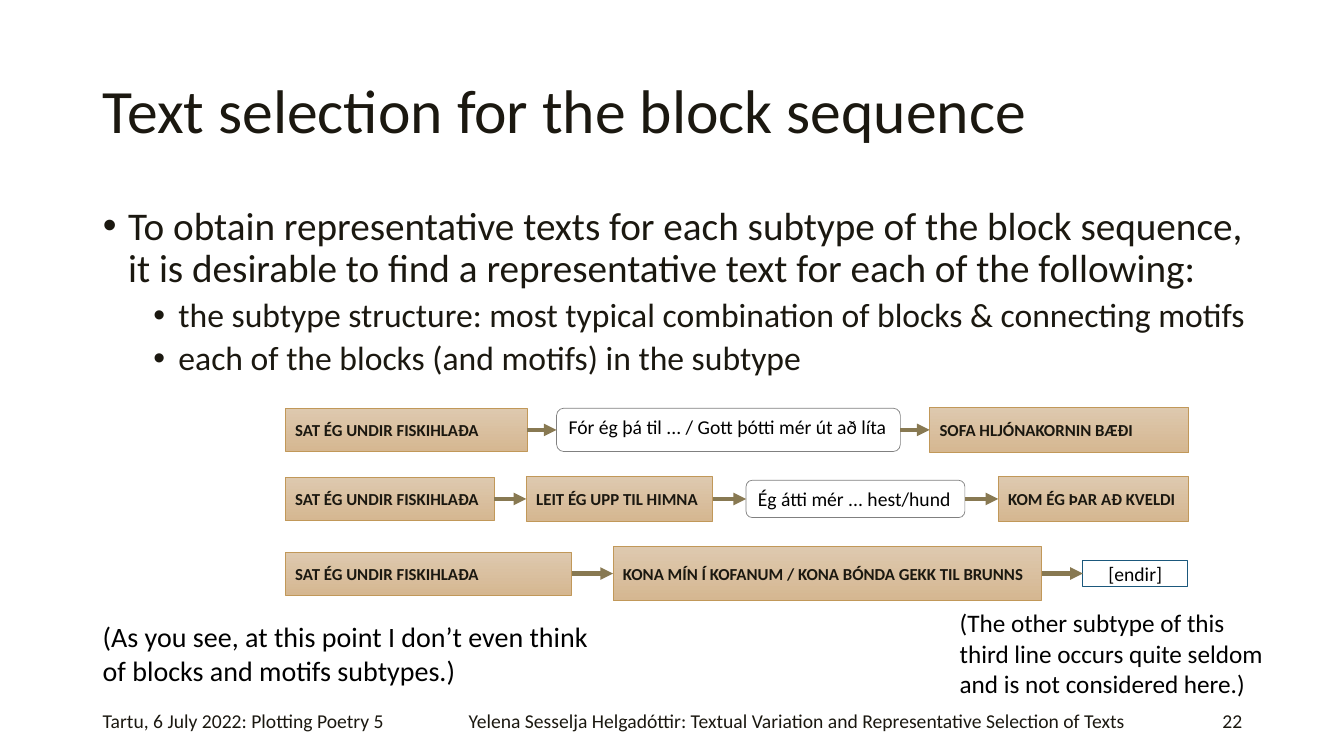
from itertools import pairwise

from lxml import etree
from pptx import Presentation
from pptx.dml.color import RGBColor
from pptx.enum.shapes import MSO_CONNECTOR, MSO_SHAPE
from pptx.enum.text import MSO_ANCHOR, MSO_AUTO_SIZE, PP_ALIGN
from pptx.oxml.ns import qn
from pptx.util import Inches, Pt

FONT, INK, BLACK = "Calibri", "1B1810", "000000"
LEFT, CENTER, RIGHT = PP_ALIGN.LEFT, PP_ALIGN.CENTER, PP_ALIGN.RIGHT
TOP, MIDDLE = MSO_ANCHOR.TOP, MSO_ANCHOR.MIDDLE

TITLE = "Text selection for the block sequence"
BULLETS = [
    (0, "To obtain representative texts for each subtype of the block sequence, "
        "it is desirable to find a representative text for each of the following:"),
    (1, "the subtype structure: most typical combination of blocks & connecting motifs"),
    (1, "each of the blocks (and motifs) in the subtype"),
]
LEVELS = [(28, 10, 0.25), (24, 5, 0.75)]

SEQUENCES = [
    (4.265, [
        ("block", 2.83, 2.4, 0.43, "SAT ÉG UNDIR FISKIHLAÐA"),
        ("long motif", 5.52, 3.41, 0.43, "Fór ég þá til ... / Gott þótti mér út að líta"),
        ("block", 9.22, 2.57, 0.45, "SOFA HLJÓNAKORNIN BÆÐI"),
    ]),
    (4.95, [
        ("block", 2.83, 2.07, 0.43, "SAT ÉG UNDIR FISKIHLAÐA"),
        ("block", 5.22, 1.85, 0.44, "LEIT ÉG UPP TIL HIMNA"),
        ("motif", 7.4, 2.17, 0.37, "Ég átti mér ... hest/hund"),
        ("block", 9.9, 1.89, 0.44, "KOM ÉG ÞAR AÐ KVELDI"),
    ]),
    (5.69, [
        ("block", 2.83, 2.84, 0.43, "SAT ÉG UNDIR FISKIHLAÐA"),
        ("block", 6.08, 4.25, 0.54, "KONA MÍN Í KOFANUM / KONA BÓNDA GEKK TIL BRUNNS"),
        ("end", 10.74, 1.04, 0.25, "[endir]"),
    ]),
]
ROUNDED = MSO_SHAPE.FLOWCHART_ALTERNATE_PROCESS
STYLES = {
    "block": (MSO_SHAPE.RECTANGLE, "C19859", 0.5, 12, INK, True, LEFT, MIDDLE),
    "motif": (ROUNDED, "808080", 0.5, 14, BLACK, False, LEFT, MIDDLE),
    "long motif": (ROUNDED, "808080", 0.5, 14, BLACK, False, LEFT, TOP),
    "end": (MSO_SHAPE.RECTANGLE, "1B587C", 0.75, 14, BLACK, False, CENTER, MIDDLE),
}
BLOCK_GRADIENT = ["DEC9AF", "D5B791"]
ARROW = "887952"

TEXTS = [
    (0.92, 6.95, 3.15, 0.4, "Tartu, 6 July 2022: Plotting Poetry 5", 14, INK, LEFT, MIDDLE),
    (3.92, 6.95, 7.97, 0.4,
     "Yelena Sesselja Helgadóttir: Textual Variation and Representative Selection of Texts",
     14, INK, CENTER, MIDDLE),
    (11.89, 6.95, 0.53, 0.4, "22", 14, INK, RIGHT, MIDDLE),
    (0.92, 6.1, 5.08, 0.77,
     "(As you see, at this point I don’t even think of blocks and motifs subtypes.)",
     20, BLACK, LEFT, TOP),
    (9.42, 5.98, 3.33, 1.01,
     "(The other subtype of this third line occurs quite seldom and is not considered here.)",
     18, BLACK, LEFT, TOP),
]


def rgb(value):
    return RGBColor.from_string(value)


def place(sp, *box):
    sp.left, sp.top, sp.width, sp.height = map(Inches, box)


def format_paragraph(p, size, color, align=LEFT, bold=False):
    p.alignment = align
    for r in p.runs:
        r.font.name, r.font.size, r.font.bold = FONT, Pt(size), bold
        r.font.color.rgb = rgb(color)


def write(sp, text, size, color, align, anchor, bold=False):
    tf = sp.text_frame
    tf.text = text
    tf.word_wrap = True
    tf.auto_size = MSO_AUTO_SIZE.NONE
    tf.vertical_anchor = anchor
    format_paragraph(tf.paragraphs[0], size, color, align, bold)


def add_bullets(sp):
    tf = sp.text_frame
    tf.text = "\n".join(text for _, text in BULLETS)
    tf.auto_size = MSO_AUTO_SIZE.NONE
    for p, (level, _) in zip(tf.paragraphs, BULLETS):
        size, before, indent = LEVELS[level]
        p.level = level
        format_paragraph(p, size, INK)
        p.line_spacing, p.space_before = 0.9, Pt(before)
        pPr = p._p.get_or_add_pPr()
        pPr.set("marL", str(Inches(indent)))
        pPr.set("indent", str(Inches(-0.25)))
        etree.SubElement(pPr, qn("a:buFont"), typeface="Arial")
        etree.SubElement(pPr, qn("a:buChar"), char="•")


def add_step(shapes, middle, kind, left, width, height, text):
    preset, line, weight, size, color, bold, align, anchor = STYLES[kind]
    box = map(Inches, (left, middle - height / 2, width, height))
    sp = shapes.add_shape(preset, *box)
    sp.shadow.inherit = False
    if kind == "block":
        sp.fill.gradient()
        sp.fill.gradient_angle = 270
        for stop, value in zip(sp.fill.gradient_stops, BLOCK_GRADIENT):
            stop.color.rgb = rgb(value)
    else:
        sp.fill.background()
    sp.line.color.rgb = rgb(line)
    sp.line.width = Pt(weight)
    write(sp, text, size, color, align, anchor, bold)
    if align == LEFT:
        sp.text_frame.margin_right = 0
    return sp


def add_arrow(shapes, start, end):
    s = shapes.add_connector(MSO_CONNECTOR.STRAIGHT, 0, 0, 0, 0)
    s.begin_connect(start, 3)
    s.end_connect(end, 1)
    s.line.color.rgb = rgb(ARROW)
    s.line.width = Pt(3)
    etree.SubElement(s.line._get_or_add_ln(), qn("a:tailEnd"), type="triangle")
    etree.SubElement(s._element.spPr, qn("a:effectLst"))


def main():
    prs = Presentation()
    prs.slide_width, prs.slide_height = Inches(13.33), Inches(7.5)
    slide = prs.slides.add_slide(prs.slide_layouts[1])
    title, body = slide.placeholders
    place(title, 0.92, 0.4, 11.5, 1.45)
    write(title, TITLE, 44, INK, LEFT, MIDDLE)
    title.text_frame.paragraphs[0].line_spacing = 0.9
    place(body, 0.92, 2, 11.61, 4.76)
    add_bullets(body)
    for middle, steps in SEQUENCES:
        shapes = slide.shapes.add_group_shape().shapes
        row = [add_step(shapes, middle, *step) for step in steps]
        for start, end in pairwise(row):
            add_arrow(shapes, start, end)
    for left, top, width, height, *content in TEXTS:
        sp = slide.shapes.add_textbox(*map(Inches, (left, top, width, height)))
        write(sp, *content)
    prs.save("out.pptx")


if __name__ == "__main__":
    main()
